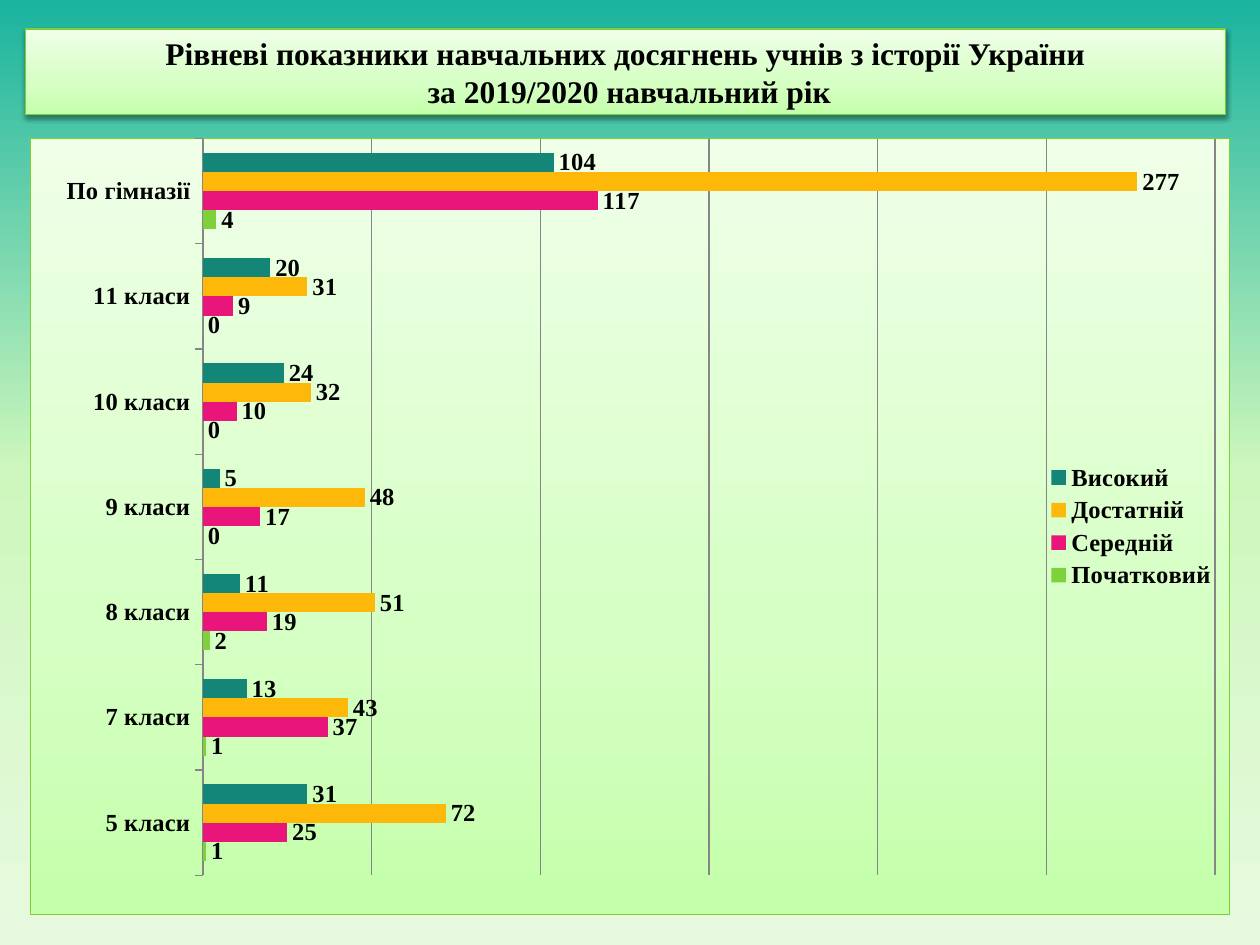
from pptx import Presentation
from pptx.chart.data import CategoryChartData
from pptx.dml.color import RGBColor
from pptx.enum.chart import XL_CHART_TYPE, XL_LABEL_POSITION, XL_LEGEND_POSITION, XL_TICK_LABEL_POSITION, XL_TICK_MARK
from pptx.enum.shapes import MSO_SHAPE
from pptx.enum.text import MSO_ANCHOR, PP_ALIGN
from pptx.oxml import parse_xml
from pptx.oxml.ns import nsdecls, qn
from pptx.util import Pt

BAR = XL_CHART_TYPE.BAR_CLUSTERED
OUTSIDE_END = XL_LABEL_POSITION.OUTSIDE_END
RIGHT = XL_LEGEND_POSITION.RIGHT
LOW = XL_TICK_LABEL_POSITION.LOW
TICK_OUT = XL_TICK_MARK.OUTSIDE
RECTANGLE = MSO_SHAPE.RECTANGLE
MIDDLE = MSO_ANCHOR.MIDDLE
CENTER = PP_ALIGN.CENTER

TITLE = "Рівневі показники навчальних досягнень учнів з історії України\v за 2019/2020 навчальний рік"
CLASSES = ["5 класи", "7 класи", "8 класи", "9 класи", "10 класи", "11 класи", "По гімназії"]
LEVELS = [
    ("Початковий", "7FD13B", (1, 1, 2, 0, 0, 0, 4)),
    ("Середній", "EA157A", (25, 37, 19, 17, 10, 9, 117)),
    ("Достатній", "FEB80A", (72, 43, 51, 48, 32, 31, 277)),
    ("Високий", "138677", (31, 13, 11, 5, 24, 20, 104)),
]
BACKDROP = [(0, "1AB39F"), (50, "CEF7BD"), (100, "E7FADF")]
PANEL = [(0, "C4FFAA"), (35, "D5FFC3"), (100, "EFFFE8")]
BORDER = "7CD036"
GRID = "868686"
FONT = "Times New Roman"
TITLE_BOX = (14.4, 16.6, 686, 49)
CHART_BOX = (16.9, 78.8, 686, 444)
PLOT = {"x": 0.144, "y": 0, "w": 0.844, "h": 0.95}


def color(value):
    return RGBColor.from_string(value)


def gradient(stops, angle):
    marks = "".join(
        f'<a:gs pos="{position * 1000}"><a:srgbClr val="{value}"/></a:gs>' for position, value in stops)
    return parse_xml(
        f'<a:gradFill {nsdecls("a")} rotWithShape="1"><a:gsLst>{marks}</a:gsLst>'
        f'<a:lin ang="{angle * 60000}" scaled="0"/></a:gradFill>')


def set_gradient(fill, owner, stops, angle):
    fill.solid()
    solid = next(owner.iter(qn("a:solidFill")))
    solid.getparent().replace(solid, gradient(stops, angle))


def style_font(font, size):
    font.name = FONT
    font.size = Pt(size)
    font.bold = True
    font.color.rgb = color("000000")


def style_line(line, value):
    line.color.rgb = color(value)
    line.width = Pt(0.75)


def add_title(page):
    box = page.shapes.add_shape(RECTANGLE, *map(Pt, TITLE_BOX))
    set_gradient(box.fill, box.element.spPr, PANEL, 270)
    style_line(box.line, BORDER)
    box.shadow.inherit = False
    box.element.spPr.find(qn("a:effectLst")).append(parse_xml(
        f'<a:outerShdw {nsdecls("a")} blurRad="{Pt(3.1)}" dist="{Pt(1.6)}" dir="5400000" rotWithShape="0">'
        '<a:srgbClr val="000000"><a:alpha val="38000"/></a:srgbClr></a:outerShdw>'))
    frame = box.text_frame
    frame.word_wrap = True
    frame.vertical_anchor = MIDDLE
    frame.text = TITLE
    paragraph = frame.paragraphs[0]
    paragraph.alignment = CENTER
    for span in paragraph.runs:
        style_font(span.font, 18)


def add_level_chart(page):
    data = CategoryChartData()
    data.categories = CLASSES
    for name, _, values in LEVELS:
        data.add_series(name, values)
    chart = page.shapes.add_chart(BAR, *map(Pt, CHART_BOX), data).chart
    chart.has_title = False
    chart.font.name = "Calibri"
    chart.font.size = Pt(10)

    plot = chart.plots[0]
    plot.gap_width = 150
    plot.overlap = 0
    plot.vary_by_categories = False
    for series, (_, fill, _) in zip(plot.series, LEVELS):
        series.format.fill.solid()
        series.format.fill.fore_color.rgb = color(fill)
        labels = series.data_labels
        labels.show_value = True
        labels.position = OUTSIDE_END
        style_font(labels.font, 14)

    category_axis = chart.category_axis
    category_axis.major_tick_mark = TICK_OUT
    category_axis.tick_label_position = LOW
    style_font(category_axis.tick_labels.font, 14)
    style_line(category_axis.format.line, GRID)
    value_axis = chart.value_axis
    value_axis.minimum_scale = 0
    value_axis.maximum_scale = 300
    value_axis.major_unit = 50
    value_axis.has_major_gridlines = True
    style_line(value_axis.major_gridlines.format.line, GRID)
    value_axis.visible = False

    chart.has_legend = True
    chart.legend.position = RIGHT
    chart.legend.include_in_layout = False
    style_font(chart.legend.font, 14)
    set_frame(chart)


def set_frame(chart):
    root = chart.element if hasattr(chart, "element") else chart._chartSpace
    area = root.find(qn("c:chart")).find(qn("c:plotArea"))
    for old in area.findall(qn("c:layout")):
        area.remove(old)
    modes = "".join(f'<c:{key}Mode val="edge"/>' for key in "xy")
    sizes = "".join(f'<c:{key} val="{value}"/>' for key, value in PLOT.items())
    area.insert(0, parse_xml(
        f'<c:layout {nsdecls("c")}><c:manualLayout><c:layoutTarget val="inner"/>'
        f'{modes}{sizes}</c:manualLayout></c:layout>'))
    panel = parse_xml(
        f'<c:spPr {nsdecls("c", "a")}><a:ln w="{Pt(0.75)}"><a:solidFill>'
        f'<a:srgbClr val="{BORDER}"/></a:solidFill></a:ln></c:spPr>')
    panel.insert(0, gradient(PANEL, 270))
    root.find(qn("c:chart")).addnext(panel)


def main():
    deck = Presentation()
    deck.slide_width, deck.slide_height = Pt(720), Pt(540)
    page = deck.slides.add_slide(deck.slide_layouts[6])
    set_gradient(page.background.fill, page.element, BACKDROP, 90)
    add_title(page)
    add_level_chart(page)
    deck.save("out.pptx")


if __name__ == "__main__":
    main()
